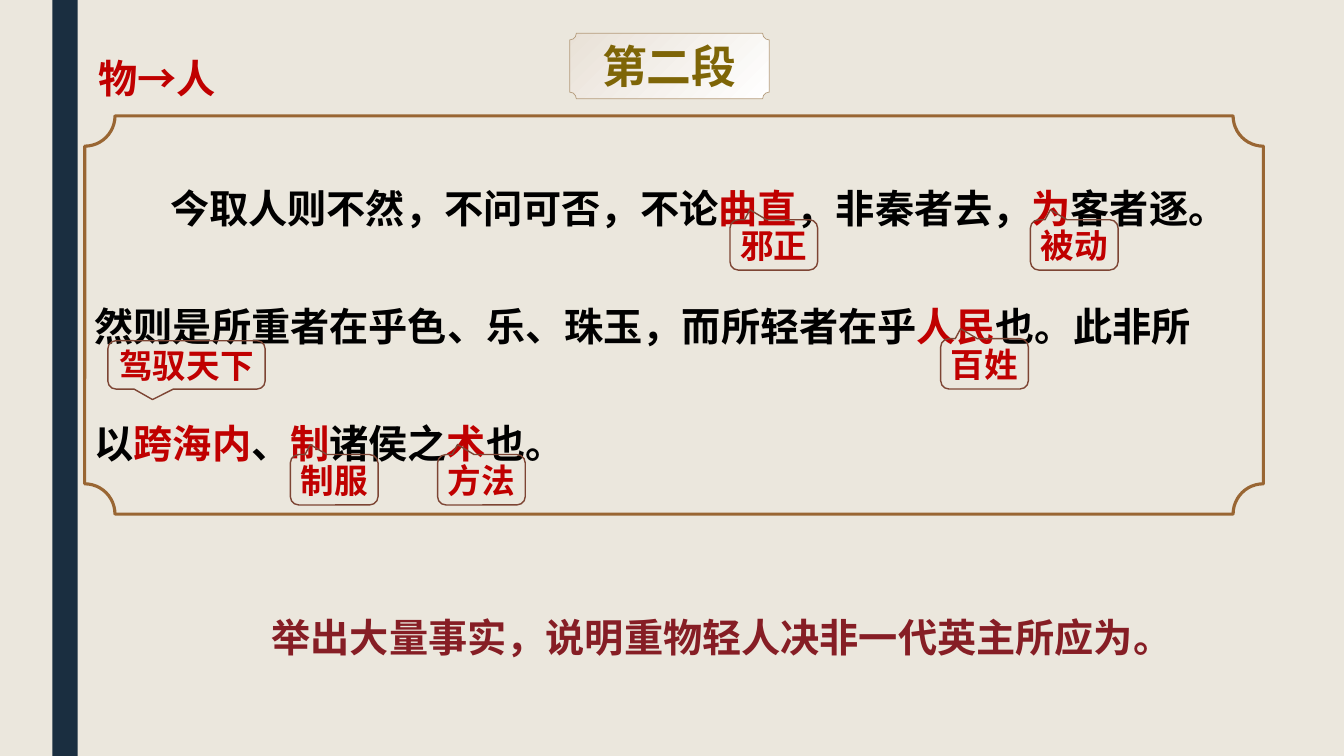
from lxml import etree
from pptx import Presentation
from pptx.dml.color import RGBColor
from pptx.enum.shapes import MSO_SHAPE
from pptx.enum.text import MSO_ANCHOR, PP_ALIGN
from pptx.oxml.ns import qn
from pptx.util import Inches, Pt

COLORS = {
    "paper": "EBE7DD", "navy": "1A2E40", "black": "000000", "red": "C00000",
    "wine": "861E25", "frame": "996633", "callout": "7D4534",
    "plaque_start": "E9E1D7", "plaque_end": "FFFFFF", "plaque_line": "B59C7C",
    "title_start": "7E6507", "title_end": "7D4534",
}
LATIN, CJK = "Karla", "Noto Sans CJK SC"

PASSAGE = [
    ("今取人则不然，不问可否，不论", "black"), ("曲直", "red"),
    ("，非秦者去，", "black"), ("为", "red"),
    ("客者逐。然则是所重者在乎色、乐、珠玉，而所轻者在乎", "black"),
    ("人民", "red"), ("也。此非所以", "black"), ("跨海内", "red"),
    ("、", "black"), ("制", "red"), ("诸侯之", "black"), ("术", "red"),
    ("也。", "black"),
]

POINT_UP = (-0.272, -0.698, 0.167)
POINT_DOWN = (-0.216, 0.717, 0.167)
GLOSSES = [
    ("驾驭天下", (1.07, 3.38, 1.56, 0.48), POINT_DOWN),
    ("邪正", (7.24, 2.18, 0.87, 0.5), POINT_UP),
    ("被动", (10.22, 2.18, 0.87, 0.5), POINT_UP),
    ("百姓", (9.33, 3.36, 0.87, 0.5), POINT_UP),
    ("制服", (2.88, 4.51, 0.87, 0.5), POINT_UP),
    ("方法", (4.34, 4.51, 0.87, 0.5), POINT_UP),
]


def rgb(name):
    return RGBColor.from_string(COLORS[name])


def inches(box):
    return [Inches(v) for v in box]


def set_gradient(fill, start, end):
    """Two-colour gradient running from top left to bottom right."""
    fill.gradient()
    fill.gradient_angle = 315
    for stop, name in zip(fill.gradient_stops, (start, end)):
        stop.color.rgb = rgb(name)


def add_run(p, text, size, color=None, latin=LATIN):
    r = p.add_run()
    r.text = text
    r.font.size = Pt(size)
    r.font.bold = True
    if color:
        r.font.color.rgb = rgb(color)
    r.font.name = latin
    etree.SubElement(r.font._element, qn("a:ea")).set("typeface", CJK)
    return r


def add_outline(s, kind, box, line, width, adjustments=()):
    """Unfilled preset shape with a coloured outline."""
    sp = s.shapes.add_shape(kind, *inches(box))
    sp.shadow.inherit = False
    sp.fill.background()
    sp.line.color.rgb = rgb(line)
    sp.line.width = Pt(width)
    for i, value in enumerate(adjustments):
        sp.adjustments[i] = value
    return sp


def add_text(s, box, runs, size, latin=LATIN, indent=0):
    tb = s.shapes.add_textbox(*inches(box))
    tb.text_frame.word_wrap = True
    p = tb.text_frame.paragraphs[0]
    if indent:
        p._p.get_or_add_pPr().set("indent", str(Inches(indent)))
    for text, color in runs:
        add_run(p, text, size, color, latin)
    return p


def add_backdrop(s):
    s.background.fill.solid()
    s.background.fill.fore_color.rgb = rgb("paper")
    bar = s.shapes.add_shape(MSO_SHAPE.RECTANGLE, *inches((0.52, 0, 0.25, 7.5)))
    bar.shadow.inherit = False
    bar.fill.solid()
    bar.fill.fore_color.rgb = rgb("navy")
    bar.line.fill.background()


def add_title(s, box):
    x, y, w, h = box
    plaque = add_outline(s, MSO_SHAPE.PLAQUE, box, "plaque_line", 0.5, [0.102])
    set_gradient(plaque.fill, "plaque_start", "plaque_end")
    title = s.shapes.title
    title.left, title.top, title.width, title.height = inches((x - 0.65, y, w + 1.3, h))
    title._element.addprevious(plaque._element)
    tf = title.text_frame
    tf.vertical_anchor = MSO_ANCHOR.MIDDLE
    p = tf.paragraphs[0]
    p.alignment = PP_ALIGN.CENTER
    r = add_run(p, "第二段", 32, latin=CJK)
    set_gradient(r.font.fill, "title_start", "title_end")


def add_passage(s, box):
    x, y, w, h = box
    add_outline(s, MSO_SHAPE.PLAQUE, box, "frame", 2.25, [0.076])
    p = add_text(s, (x, y - 0.07, w - 0.54, h - 0.52), PASSAGE, 28, CJK, 0.75)
    p.line_spacing = 2.5


def add_gloss(s, text, box, adjustments):
    sp = add_outline(s, MSO_SHAPE.ROUNDED_RECTANGULAR_CALLOUT, box, "callout", 1, adjustments)
    tf = sp.text_frame
    tf.word_wrap = False
    tf.vertical_anchor = MSO_ANCHOR.MIDDLE
    p = tf.paragraphs[0]
    p.alignment = PP_ALIGN.CENTER
    add_run(p, text, 24, "red")


def main():
    prs = Presentation()
    prs.slide_width, prs.slide_height = Inches(13.33), Inches(7.5)
    s = prs.slides.add_slide(prs.slide_layouts[5])
    add_backdrop(s)
    add_title(s, (5.65, 0.33, 1.98, 0.65))
    add_passage(s, (0.84, 1.15, 11.69, 3.95))
    summary = add_text(s, (0.72, 6.04, 12.21, 0.57),
                       [("举出大量事实，说明重物轻人决非一代英主所应为。", "wine")], 28, indent=0.67)
    summary.alignment = PP_ALIGN.CENTER
    for text, box, adjustments in GLOSSES:
        add_gloss(s, text, box, adjustments)
    add_text(s, (0.88, 0.49, 2.25, 0.57), [("物→人", "red")], 28)
    prs.save("out.pptx")


if __name__ == "__main__":
    main()
